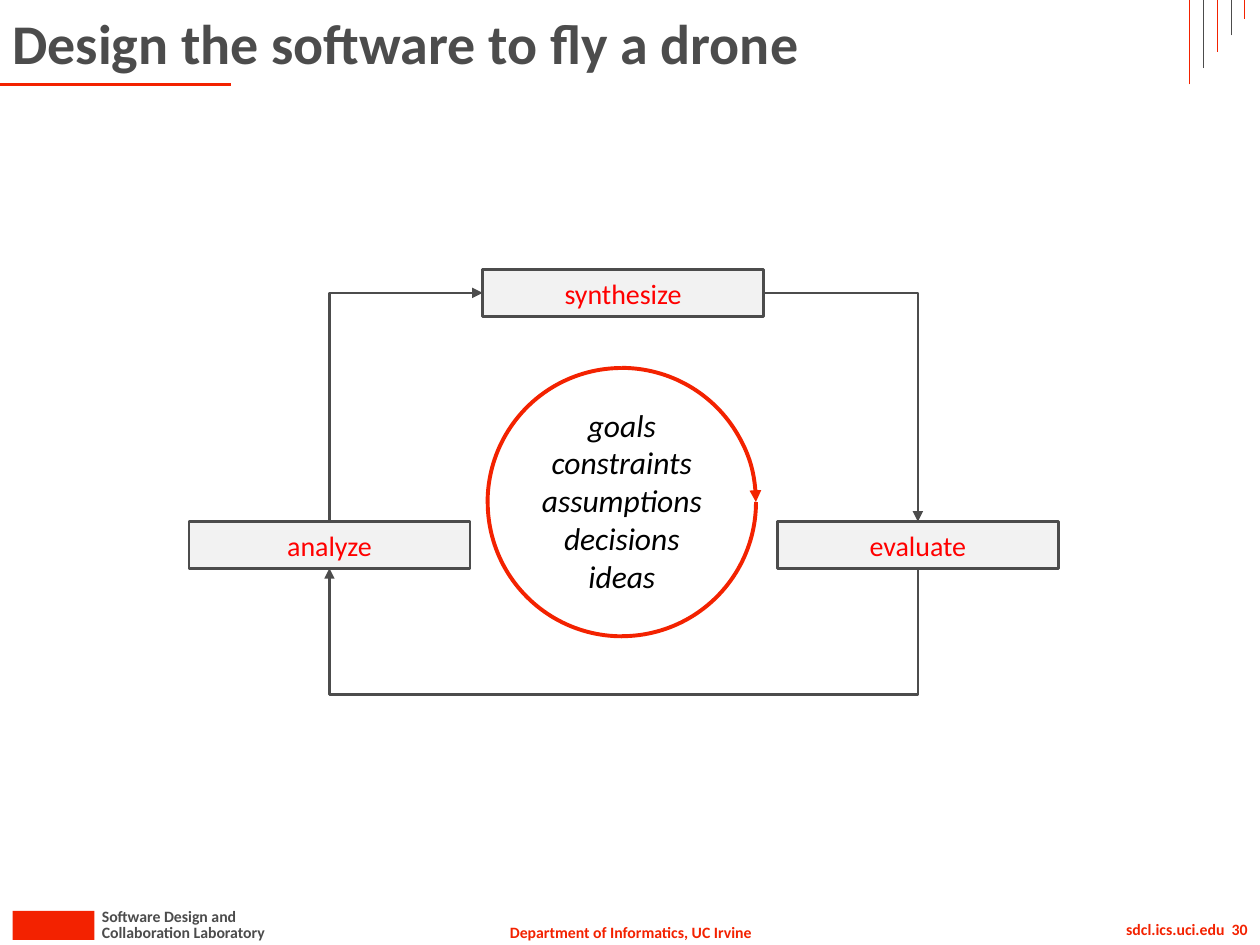
import pptx
import pptx.dml.color
import pptx.enum.shapes
import pptx.enum.text
import pptx.oxml
import pptx.oxml.ns
import pptx.util

Inches = pptx.util.Inches
ALIGN = pptx.enum.text.PP_ALIGN
ANCHOR = pptx.enum.text.MSO_ANCHOR
SHAPE = pptx.enum.shapes.MSO_SHAPE
CONNECTOR = pptx.enum.shapes.MSO_CONNECTOR

COLORS = {"accent": "F32200", "gray": "4C4C4C", "box": "F2F2F2",
          "step": "FF0000", "ideas": "000000"}

TITLE = "Design the software to fly a drone"
# text, (left, top, width, height), color, alignment, wrap
FOOTER = [
    ("Department of Informatics, UC Irvine", (3.93, 7.27, 2.15, 0.25), "accent", ALIGN.CENTER, False),
    ("Collaboration Laboratory", (0.71, 7.27, 1.53, 0.25), "gray", ALIGN.LEFT, False),
    ("Software Design and", (0.71, 7.15, 1.29, 0.25), "gray", ALIGN.LEFT, False),
    ("sdcl.ics.uci.edu  30", (7.84, 7.25, 2.16, 0.25), "accent", ALIGN.RIGHT, True),
]
FOOTER_BLOCK = (0.1, 7.23, 0.65, 0.23)
STEPS = {"analyze": (1.5, 4.14), "evaluate": (6.17, 4.14), "synthesize": (3.83, 2.14)}
STEP_WIDTH, STEP_HEIGHT = 2.23, 0.37
CONCERNS = ["goals", "constraints", "assumptions", "decisions", "ideas"]
CYCLE = (3.87, 2.92, 2.13, 2.13)
RETURN_DROP = 1.03  # how far the returning arrow runs below the steps


def rgb(name):
    return pptx.dml.color.RGBColor.from_string(COLORS[name])


def put_text(shape, text, size, color, align, bold=False, italic=False):
    shape.text_frame.text = text
    for paragraph in shape.text_frame.paragraphs:
        paragraph.alignment = align
        font = paragraph.runs[0].font
        font.name, font.size = "Calibri", pptx.util.Pt(size)
        font.bold, font.italic = bold, italic
        font.color.rgb = rgb(color)


def add_text(shapes, text, place, size, color, align, wrap, **style):
    box = shapes.add_textbox(*map(Inches, place))
    box.text_frame.word_wrap = wrap
    put_text(box, text, size, color, align, **style)
    return box


def style_line(shape, color, width, arrow=False):
    shape.line.color.rgb = rgb(color)
    shape.line.width = pptx.util.Pt(width)
    if arrow:
        tail = pptx.oxml.parse_xml(
            f'<a:tailEnd {pptx.oxml.ns.nsdecls("a")} type="triangle"/>')
        shape.line._get_or_add_ln().append(tail)


def add_line(shapes, kind, start, end, color, width, arrow=False):
    line = shapes.add_connector(kind, *map(Inches, (*start, *end)))
    style_line(line, color, width, arrow)
    line._element.spPr.append(
        pptx.oxml.parse_xml(f'<a:effectLst {pptx.oxml.ns.nsdecls("a")}/>'))
    return line


def add_elbow(shapes, start, end, vertical_start, drop=None):
    """Arrow with one corner, or with two when it drops below both ends."""
    dx, dy = end[0] - start[0], end[1] - start[1]
    center = (start[0] + dx / 2, start[1] + dy / 2)
    # An elbow leaves sideways, so one that leaves vertically is turned 90 degrees.
    across, down = (dy, -dx) if vertical_start else (dx, dy)
    elbow = add_line(shapes, CONNECTOR.ELBOW,
                     (center[0] - across / 2, center[1] - down / 2),
                     (center[0] + across / 2, center[1] + down / 2),
                     "gray", 1.5, arrow=True)
    properties = elbow._element.spPr
    if vertical_start:
        properties.find(pptx.oxml.ns.qn("a:xfrm")).set("rot", "5400000")
    geometry = properties.find(pptx.oxml.ns.qn("a:prstGeom"))
    if drop is None:
        geometry.set("prst", "bentConnector2")
    else:
        guides = geometry.find(pptx.oxml.ns.qn("a:avLst"))
        guides.append(pptx.oxml.parse_xml(
            f'<a:gd {pptx.oxml.ns.nsdecls("a")} name="adj1" '
            f'fmla="val {round(drop / abs(across) * 100000)}"/>'))


def add_block(shapes, kind, place, fill=None):
    block = shapes.add_shape(kind, *map(Inches, place))
    block.shadow.inherit = False
    if fill:
        block.fill.solid()
        block.fill.fore_color.rgb = rgb(fill)
    else:
        block.fill.background()
    return block


def add_step(shapes, name, corner):
    step = add_block(shapes, SHAPE.RECTANGLE, (*corner, STEP_WIDTH, STEP_HEIGHT), "box")
    style_line(step, "gray", 1.5)
    step.text_frame.vertical_anchor = ANCHOR.MIDDLE
    put_text(step, name, 16, "step", ALIGN.CENTER)


def side(name, across, down):
    """Point on a step, given as fractions of its width and height."""
    left, top = STEPS[name]
    return left + across * STEP_WIDTH, top + down * STEP_HEIGHT


def add_cycle(shapes):
    quarters = shapes.add_group_shape().shapes
    for turn in (0, 90, 180, 270):
        quarter = add_block(quarters, SHAPE.ARC, CYCLE)
        quarter.rotation = turn
        style_line(quarter, "accent", 2.25, arrow=turn == 0)


def main():
    deck = pptx.Presentation()
    deck.slide_width, deck.slide_height = Inches(10), Inches(7.5)
    shapes = deck.slides.add_slide(deck.slide_layouts[6]).shapes

    for text, place, color, align, wrap in FOOTER:
        add_text(shapes, text, place, 9, color, align, wrap, bold=True)
    add_block(shapes, SHAPE.RECTANGLE, FOOTER_BLOCK, "accent").line.fill.background()
    add_line(shapes, CONNECTOR.STRAIGHT, (0, 0.67), (1.83, 0.67), "accent", 1.5)
    for i in range(5):
        x = 9.44 + i * 0.11
        add_line(shapes, CONNECTOR.STRAIGHT, (x, 0.67 - i * 0.13), (x, 0),
                 ("accent", "gray")[i % 2], 0.5)
    title = add_text(shapes, TITLE, (0, 0, 9, 0.67), 32, "gray", ALIGN.LEFT, True, bold=True)
    title.text_frame.vertical_anchor = ANCHOR.MIDDLE

    for name, corner in STEPS.items():
        add_step(shapes, name, corner)
    add_elbow(shapes, side("analyze", 0.5, 0), side("synthesize", 0, 0.5), True)
    add_elbow(shapes, side("synthesize", 1, 0.5), side("evaluate", 0.5, 0), False)
    # The ends differ slightly in height because the drop is a share of that difference.
    x, y = side("evaluate", 0.5, 1)
    add_elbow(shapes, (x, y - 0.01), side("analyze", 0.5, 1), True, RETURN_DROP)

    add_cycle(shapes)
    add_text(shapes, "\n".join(CONCERNS), (4.19, 3.17, 1.49, 1.62), 18, "ideas",
             ALIGN.CENTER, False, italic=True)
    deck.save("out.pptx")


if __name__ == "__main__":
    main()
